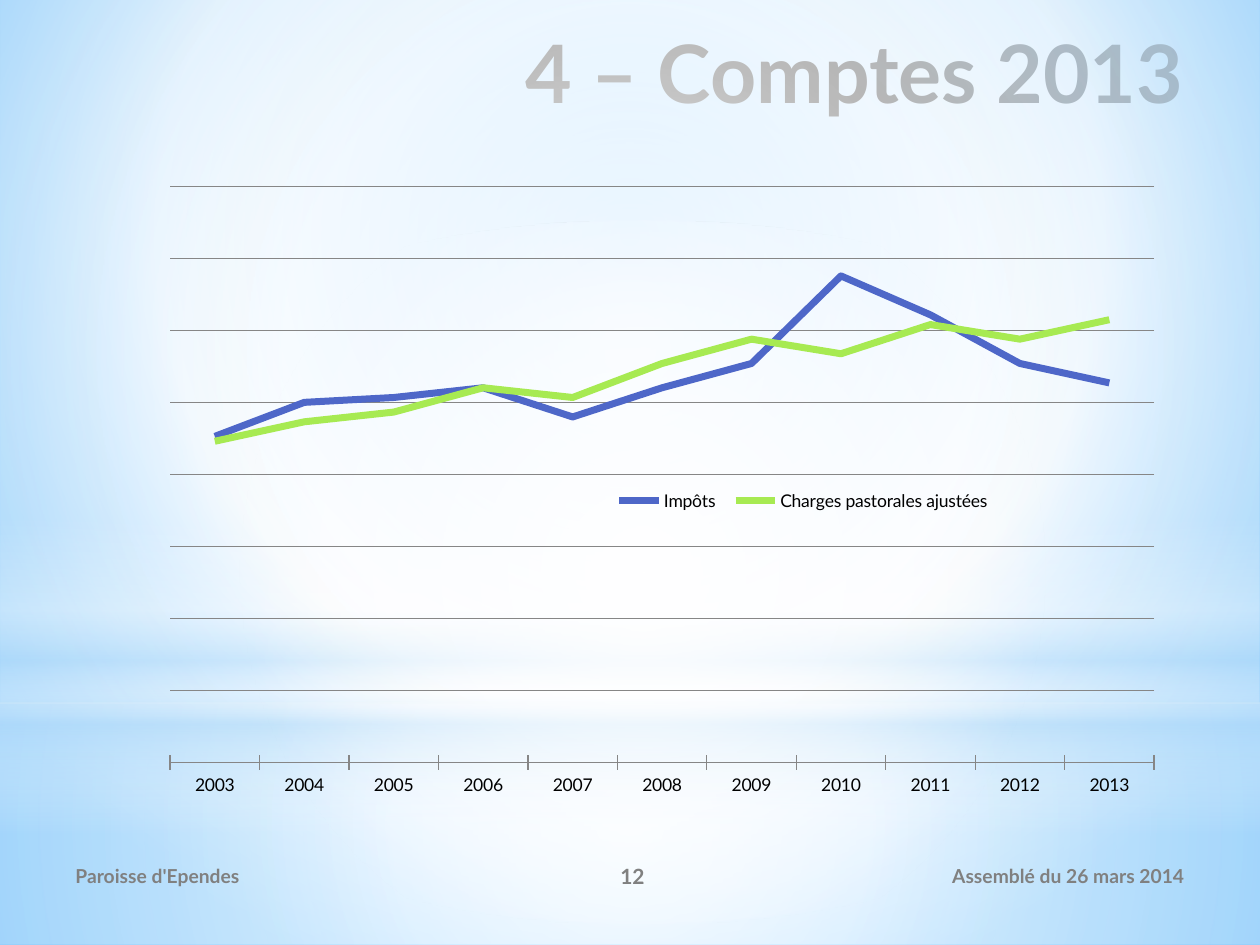
from dataclasses import dataclass
from typing import Optional

from lxml.etree import _Element
from pptx import Presentation
from pptx.chart.chart import Chart
from pptx.chart.data import CategoryChartData
from pptx.dml.color import RGBColor
from pptx.enum.chart import XL_CHART_TYPE, XL_LEGEND_POSITION, XL_TICK_LABEL_POSITION, XL_TICK_MARK
from pptx.enum.shapes import MSO_SHAPE
from pptx.enum.text import MSO_ANCHOR, PP_ALIGN
from pptx.oxml import parse_xml
from pptx.oxml.ns import nsdecls, qn
from pptx.slide import Slide
from pptx.text.text import Font
from pptx.util import Inches, Pt


@dataclass(frozen=True)
class Theme:
    font: str = "Lato"
    title_color: str = "404040"
    footer_color: str = "808080"
    chart_text: str = "000000"
    grid: str = "868686"
    taxes: str = "4E67C8"
    charges: str = "A7EA52"
    white: str = "FFFFFF"
    haze: str = "B4DCFA"
    sky: str = "9ED5FF"
    deep_sky: str = "5BB9FF"
    title_size: int = 46
    footer_size: int = 11
    number_size: int = 12
    chart_size: int = 10
    series_width: int = 4


@dataclass(frozen=True)
class Box:
    left: float
    top: float
    width: float
    height: float

    def lengths(self) -> tuple:
        return tuple(Inches(v) for v in (self.left, self.top, self.width, self.height))


@dataclass(frozen=True)
class Gradient:
    """Stops are (position, colour, opacity) in percent; focus None means vertical."""
    stops: tuple
    focus: Optional[tuple] = (50, 50, 50, 50)


@dataclass(frozen=True)
class Layer:
    box: Box
    gradient: Gradient
    geometry: MSO_SHAPE = MSO_SHAPE.RECTANGLE


@dataclass(frozen=True)
class FooterText:
    text: str
    box: Box
    alignment: PP_ALIGN
    size: int


@dataclass(frozen=True)
class Series:
    name: str
    values: tuple
    color: str


THEME = Theme()
BACKGROUND = Gradient(
    ((0, THEME.sky, 100), (60, THEME.white, 100), (100, THEME.deep_sky, 100)), (20, 10, 20, 60))
LAYERS = (
    Layer(Box(0, 5.58, 10, 1.92),
          Gradient(((0, THEME.white, 91), (37, THEME.white, 76), (100, THEME.haze, 79)))),
    Layer(Box(0, 0, 10, 5.58),
          Gradient(((0, THEME.white, 89), (48, THEME.white, 62), (100, THEME.haze, 79)))),
    Layer(Box(0, 4.12, 10, 2.5),
          Gradient(((0, THEME.white, 0), (29, THEME.white, 30), (45, THEME.haze, 40),
                    (55, THEME.white, 26), (65, THEME.haze, 60), (100, THEME.white, 0)), None)),
    Layer(Box(0.11, 1.75, 10, 5.58),
          Gradient(((0, THEME.white, 100), (56, THEME.white, 0))), MSO_SHAPE.OVAL),
)
FOOTERS = (
    FooterText("Assemblé du 26 mars 2014", Box(6.75, 6.75, 2.75, 0.4),
               PP_ALIGN.RIGHT, THEME.footer_size),
    FooterText("Paroisse d'Ependes", Box(0.5, 6.75, 3.67, 0.4),
               PP_ALIGN.LEFT, THEME.footer_size),
    FooterText("12", Box(4.17, 6.75, 1.7, 0.4), PP_ALIGN.CENTER, THEME.number_size),
)
TITLE_BOX = Box(1.46, 0.13, 8.03, 1.26)
CHART_BOX = Box(1.14, 1.39, 10.39, 5.04)
PLOT_BOX = Box(1.35, 1.48, 7.81, 4.57)
LEGEND_BOX = Box(4.8, 3.85, 3.15, 0.25)
YEARS = range(2003, 2014)
SERIES = (
    Series("Impôts", (67, 74, 75, 77, 71, 77, 82, 100, 92, 82, 78), THEME.taxes),
    Series("Charges pastorales ajustées",
           (66, 70, 72, 77, 75, 82, 87, 84, 90, 87, 91), THEME.charges),
)
GRID_STEP = 14.8
GRID_COUNT = 8


def set_gradient(properties: _Element, gradient: Gradient) -> None:
    """Put the gradient in place of the empty fill of a shape or background."""
    stops = "".join(
        f'<a:gs pos="{position * 1000}"><a:srgbClr val="{color}">'
        f'<a:alpha val="{opacity * 1000}"/></a:srgbClr></a:gs>'
        for position, color, opacity in gradient.stops)
    if gradient.focus is None:
        direction = '<a:lin ang="5400000" scaled="0"/>'
    else:
        sides = " ".join(f'{side}="{value * 1000}"' for side, value in zip("ltrb", gradient.focus))
        direction = f'<a:path path="circle"><a:fillToRect {sides}/></a:path>'
    fill = parse_xml(f'<a:gradFill {nsdecls("a")} rotWithShape="1">'
                     f'<a:gsLst>{stops}</a:gsLst>{direction}</a:gradFill>')
    properties.replace(properties.find(qn("a:noFill")), fill)


def format_font(font: Font, size: int, color: str, bold: bool) -> None:
    font.name = THEME.font
    font.size = Pt(size)
    font.bold = bold
    font.color.rgb = RGBColor.from_string(color)


def add_layer(slide: Slide, layer: Layer) -> None:
    shape = slide.shapes.add_shape(layer.geometry, *layer.box.lengths())
    shape.shadow.inherit = False
    shape.line.fill.background()
    shape.fill.background()
    set_gradient(shape.element.spPr, layer.gradient)


def add_footer(slide: Slide, footer: FooterText) -> None:
    text_frame = slide.shapes.add_textbox(*footer.box.lengths()).text_frame
    text_frame.word_wrap = True
    text_frame.vertical_anchor = MSO_ANCHOR.MIDDLE
    text_frame.text = footer.text
    paragraph = text_frame.paragraphs[0]
    paragraph.alignment = footer.alignment
    format_font(paragraph.runs[0].font, footer.size, THEME.footer_color, True)


def set_title(slide: Slide, text: str) -> None:
    title = slide.shapes.title
    title.left, title.top, title.width, title.height = TITLE_BOX.lengths()
    title.text_frame.text = text
    title.text_frame.vertical_anchor = MSO_ANCHOR.TOP
    paragraph = title.text_frame.paragraphs[0]
    paragraph.alignment = PP_ALIGN.RIGHT
    format_font(paragraph.runs[0].font, THEME.title_size, THEME.title_color, True)


def set_layout(parent: _Element, box: Box, previous: Optional[str], inner: bool) -> None:
    """Place a chart part at a box given in slide inches."""
    for old in parent.findall(qn("c:layout")):
        parent.remove(old)
    fractions = {
        "x": (box.left - CHART_BOX.left) / CHART_BOX.width,
        "y": (box.top - CHART_BOX.top) / CHART_BOX.height,
        "w": box.width / CHART_BOX.width,
        "h": box.height / CHART_BOX.height,
    }
    target = '<c:layoutTarget val="inner"/>' if inner else ""
    modes = '<c:xMode val="edge"/><c:yMode val="edge"/>'
    values = "".join(f'<c:{key} val="{value:.4f}"/>' for key, value in fractions.items())
    layout = parse_xml(f'<c:layout {nsdecls("c")}><c:manualLayout>{target}{modes}{values}'
                       '</c:manualLayout></c:layout>')
    index = 0 if previous is None else parent.index(parent.find(qn(previous))) + 1
    parent.insert(index, layout)


def format_axes(chart: Chart) -> None:
    grid_color = RGBColor.from_string(THEME.grid)
    value_axis = chart.value_axis
    value_axis.minimum_scale = 0
    value_axis.maximum_scale = GRID_STEP * GRID_COUNT
    value_axis.major_unit = GRID_STEP
    value_axis.has_major_gridlines = True
    value_axis.major_gridlines.format.line.color.rgb = grid_color
    value_axis.major_gridlines.format.line.width = Pt(0.75)
    value_axis.tick_label_position = XL_TICK_LABEL_POSITION.NONE
    value_axis.visible = False
    chart.category_axis.major_tick_mark = XL_TICK_MARK.CROSS
    chart.category_axis.format.line.color.rgb = grid_color


def add_line_chart(slide: Slide) -> None:
    data = CategoryChartData()
    data.categories = [str(year) for year in YEARS]
    for series in SERIES:
        data.add_series(series.name, series.values)
    chart = slide.shapes.add_chart(XL_CHART_TYPE.LINE, *CHART_BOX.lengths(), data).chart
    chart.has_title = False
    format_font(chart.font, THEME.chart_size, THEME.chart_text, False)
    format_axes(chart)
    for line, series in zip(chart.plots[0].series, SERIES):
        line.smooth = False
        line.format.line.width = Pt(THEME.series_width)
        line.format.line.color.rgb = RGBColor.from_string(series.color)
    chart.has_legend = True
    chart.legend.position = XL_LEGEND_POSITION.RIGHT
    chart.legend.include_in_layout = False
    plot_area = chart.element.find(".//" + qn("c:plotArea"))
    set_layout(plot_area, PLOT_BOX, None, True)
    legend = chart.element.find(".//" + qn("c:legend"))
    set_layout(legend, LEGEND_BOX, "c:legendPos", False)


def main() -> None:
    presentation = Presentation()
    presentation.slide_width, presentation.slide_height = Inches(10), Inches(7.5)
    slide = presentation.slides.add_slide(presentation.slide_layouts.get_by_name("Title Only"))
    slide.background.fill.background()
    set_gradient(slide.element.find(".//" + qn("p:bgPr")), BACKGROUND)
    for layer in LAYERS:
        add_layer(slide, layer)
    for footer in FOOTERS:
        add_footer(slide, footer)
    set_title(slide, "4 – Comptes 2013")
    add_line_chart(slide)
    presentation.save("out.pptx")


if __name__ == "__main__":
    main()
